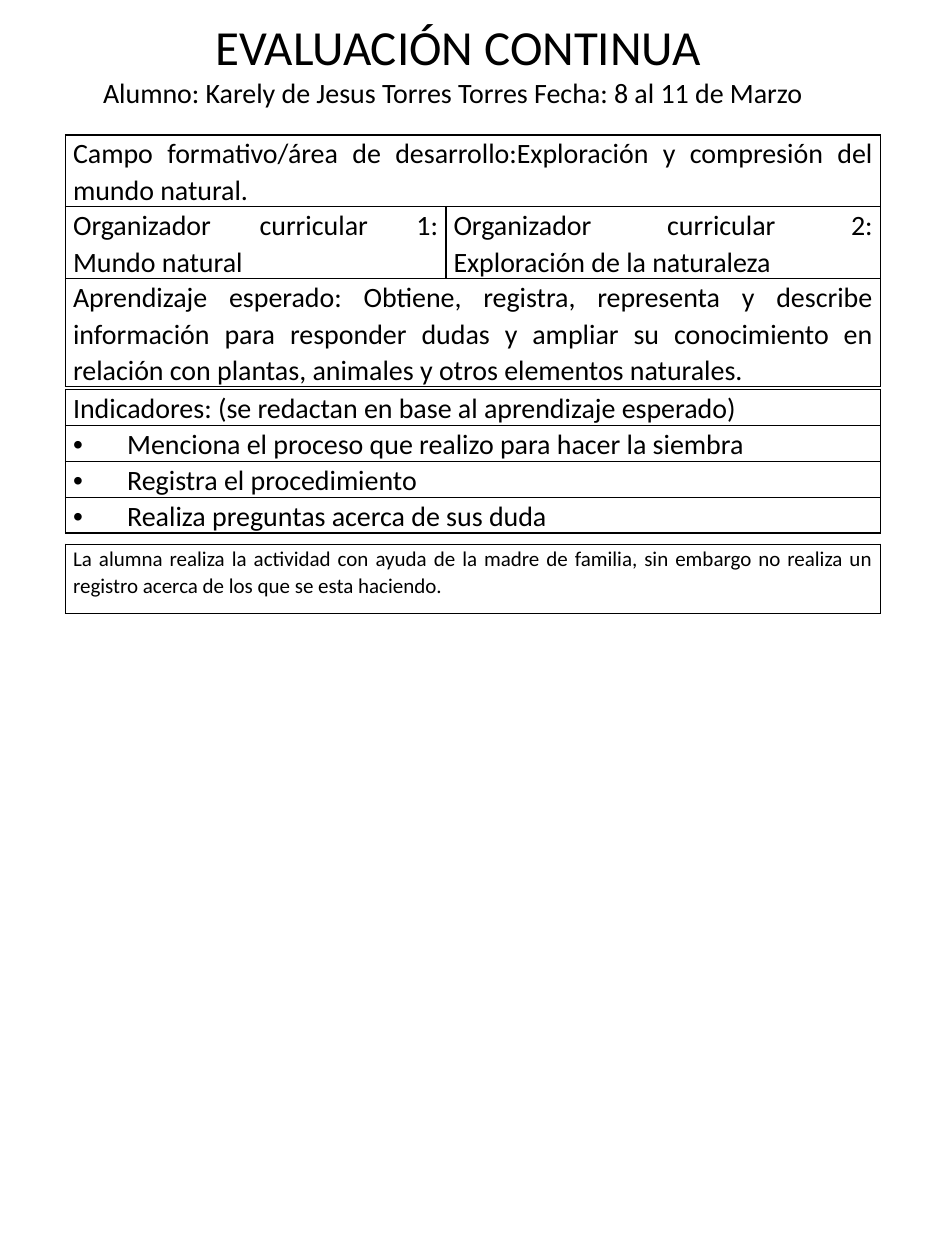
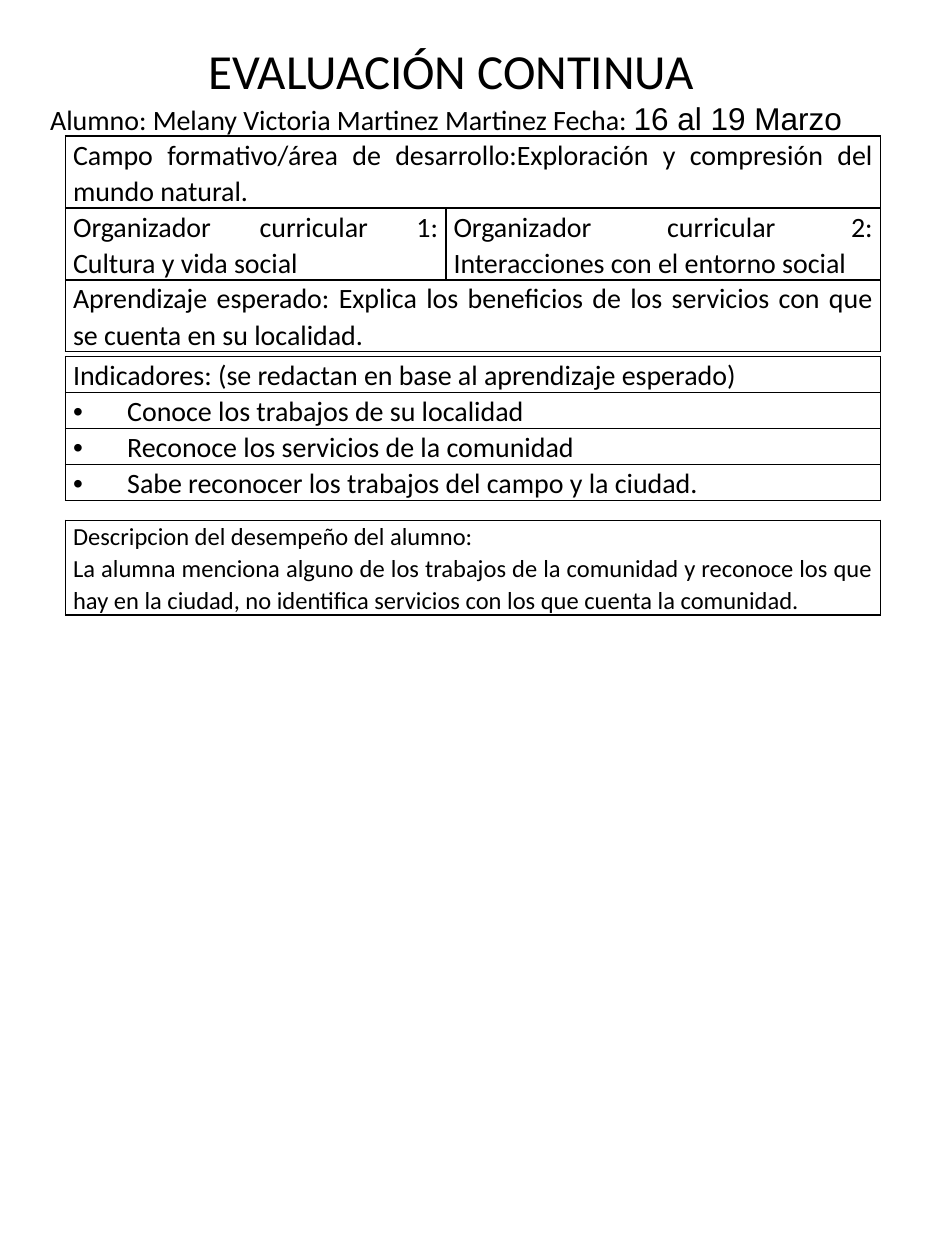
from lxml import etree
from pptx import Presentation
from pptx.dml.color import RGBColor
from pptx.enum.text import MSO_ANCHOR, PP_ALIGN
from pptx.oxml.ns import qn
from pptx.util import Inches, Pt

JUSTIFY, CENTER, LEFT = PP_ALIGN.JUSTIFY, PP_ALIGN.CENTER, PP_ALIGN.LEFT
TOP = MSO_ANCHOR.TOP

COLORS = {"ink": "000000"}
FONT = "Calibri"
TABLE_LEFT = 0.52
ORGANIZER_COLUMNS = [3.02, 3.45]
FULL_COLUMN = [sum(ORGANIZER_COLUMNS)]
LINE_HEIGHT = 0.28
INDICATOR_HEIGHT = 0.27
BULLET_INDENT = 0.43

HEADING = "EVALUACIÓN CONTINUA"
FIELD = ("Campo formativo/área de desarrollo:"
         "Exploración y compresión del mundo natural.")
INDICATORS_HEADING = "Indicadores: (se redactan en base al aprendizaje esperado)"

EVALUATIONS = [
    {
        "heading_box": (0.72, 0.08, 5.83, 1.14),
        "student": [("Alumno: Karely de Jesus Torres Torres Fecha: 8 al 11 de Marzo", {})],
        "curriculum_top": 1.07,
        "organizers": ["Mundo natural", "Exploración de la naturaleza"],
        "learning": "Aprendizaje esperado: Obtiene, registra, representa y describe "
                    "información para responder dudas y ampliar su conocimiento en "
                    "relación con plantas, animales y otros elementos naturales.",
        "learning_lines": 3,
        "indicators_top": 3.09,
        "indicators": ["Menciona el proceso que realizo para hacer la siembra",
                       "Registra el procedimiento",
                       "Realiza preguntas acerca de sus duda"],
        "remarks_top": 4.32,
        "remarks_height": 0.55,
        "remarks_size": 12,
        "remarks": ["La alumna realiza la actividad con ayuda de la madre de familia, "
                    "sin embargo no realiza un registro acerca de los que se esta "
                    "haciendo."],
    },
    {
        "heading_box": (0.3, 0.27, 6.56, 0.88),
        "student": [("Alumno: Melany Victoria Martinez Martinez Fecha: ", {}),
                    ("16 al 19 Marzo", {"size": 18, "font": "Arial"})],
        "curriculum_top": 1.08,
        "organizers": ["Cultura y vida social", "Interacciones con el entorno social"],
        "learning": "Aprendizaje esperado: Explica los beneficios de los servicios "
                    "con que se cuenta en su localidad.",
        "learning_lines": 2,
        "indicators_top": 2.83,
        "indicators": ["Conoce los trabajos de su localidad",
                       "Reconoce los servicios de la comunidad",
                       "Sabe reconocer los trabajos del campo y la ciudad."],
        "remarks_top": 4.13,
        "remarks_height": 0.74,
        "remarks_size": 14,
        "remarks": ["Descripcion del desempeño del alumno:",
                    "La alumna menciona alguno de los trabajos de la comunidad y "
                    "reconoce los que hay en la ciudad, no identifica servicios con "
                    "los que cuenta la comunidad."],
    },
]


def write(paragraph, text, size=16, font=FONT, color="ink", align=JUSTIFY,
          spacing=None, bullet=False):
    """Append text to a paragraph; a newline becomes a line break."""
    paragraph.alignment = align
    if spacing:
        paragraph.line_spacing = spacing
    for number, line in enumerate(text.split("\n")):
        if number:
            paragraph.add_line_break()
        run = paragraph.add_run()
        run.text = line
        run.font.size = Pt(size)
        run.font.name = font
        run.font.color.rgb = RGBColor.from_string(COLORS[color])
    if bullet:
        properties = paragraph._p.get_or_add_pPr()
        properties.set("marL", str(Inches(BULLET_INDENT)))
        properties.set("indent", str(-Inches(BULLET_INDENT)))
        etree.SubElement(properties, qn("a:buFont"), typeface="Arial")
        etree.SubElement(properties, qn("a:buChar"), char="•")


def draw_borders(cell, color="ink", width=1):
    properties = cell._tc.get_or_add_tcPr()
    for position, side in enumerate(("lnL", "lnR", "lnT", "lnB")):
        line = etree.Element(qn(f"a:{side}"), w=str(Pt(width)))
        fill = etree.SubElement(line, qn("a:solidFill"))
        etree.SubElement(fill, qn("a:srgbClr"), val=COLORS[color])
        properties.insert(position, line)


class EvaluationDeck:
    def __init__(self):
        self.presentation = Presentation()
        self.presentation.slide_width = Inches(7.5)
        self.presentation.slide_height = Inches(10)
        self.slide = None

    def add_slide(self):
        blank = self.presentation.slide_layouts[6]
        self.slide = self.presentation.slides.add_slide(blank)

    def heading(self, box, student):
        frame = self.slide.shapes.add_textbox(*map(Inches, box)).text_frame
        frame.word_wrap = True
        frame.vertical_anchor = TOP
        write(frame.paragraphs[0], HEADING, size=28, align=CENTER)
        student_line = frame.add_paragraph()
        for text, style in student:
            write(student_line, text, align=LEFT, **style)

    def table(self, top, columns, heights):
        """Add a bordered, unfilled table and return it."""
        table = self.slide.shapes.add_table(
            len(heights), len(columns), Inches(TABLE_LEFT), Inches(top),
            Inches(sum(columns)), Inches(sum(heights))).table
        table.first_row = table.horz_banding = False
        for column, width in zip(table.columns, columns):
            column.width = Inches(width)
        for row, height in zip(table.rows, heights):
            row.height = Inches(height)
        for cell in table.iter_cells():
            cell.margin_left = cell.margin_right = Inches(0.06)
            cell.margin_top = cell.margin_bottom = 0
            cell.fill.background()
            draw_borders(cell)
        return table

    def fill_cell(self, cell, *texts, **style):
        frame = cell.text_frame
        for number, text in enumerate(texts):
            paragraph = frame.add_paragraph() if number else frame.paragraphs[0]
            write(paragraph, text, spacing=1.07, **style)

    def curriculum(self, top, organizers, learning, learning_lines):
        heights = [LINE_HEIGHT * lines for lines in (2, 2, learning_lines)]
        table = self.table(top, ORGANIZER_COLUMNS, heights)
        for row, text in ((0, FIELD), (2, learning)):
            table.cell(row, 0).merge(table.cell(row, 1))
            self.fill_cell(table.cell(row, 0), text)
        for column, organizer in enumerate(organizers):
            self.fill_cell(table.cell(1, column),
                           f"Organizador curricular {column + 1}:\n{organizer}")

    def indicators(self, top, indicators):
        heights = [INDICATOR_HEIGHT] * (len(indicators) + 1)
        table = self.table(top, FULL_COLUMN, heights)
        self.fill_cell(table.cell(0, 0), INDICATORS_HEADING)
        for row, indicator in enumerate(indicators, start=1):
            self.fill_cell(table.cell(row, 0), indicator, bullet=True)

    def remarks(self, top, height, texts, size):
        table = self.table(top, FULL_COLUMN, [height])
        self.fill_cell(table.cell(0, 0), *texts, size=size)


def main():
    deck = EvaluationDeck()
    for evaluation in EVALUATIONS:
        deck.add_slide()
        deck.heading(evaluation["heading_box"], evaluation["student"])
        deck.curriculum(evaluation["curriculum_top"], evaluation["organizers"],
                        evaluation["learning"], evaluation["learning_lines"])
        deck.indicators(evaluation["indicators_top"], evaluation["indicators"])
        deck.remarks(evaluation["remarks_top"], evaluation["remarks_height"],
                     evaluation["remarks"], evaluation["remarks_size"])
    deck.presentation.save("out.pptx")


if __name__ == "__main__":
    main()
